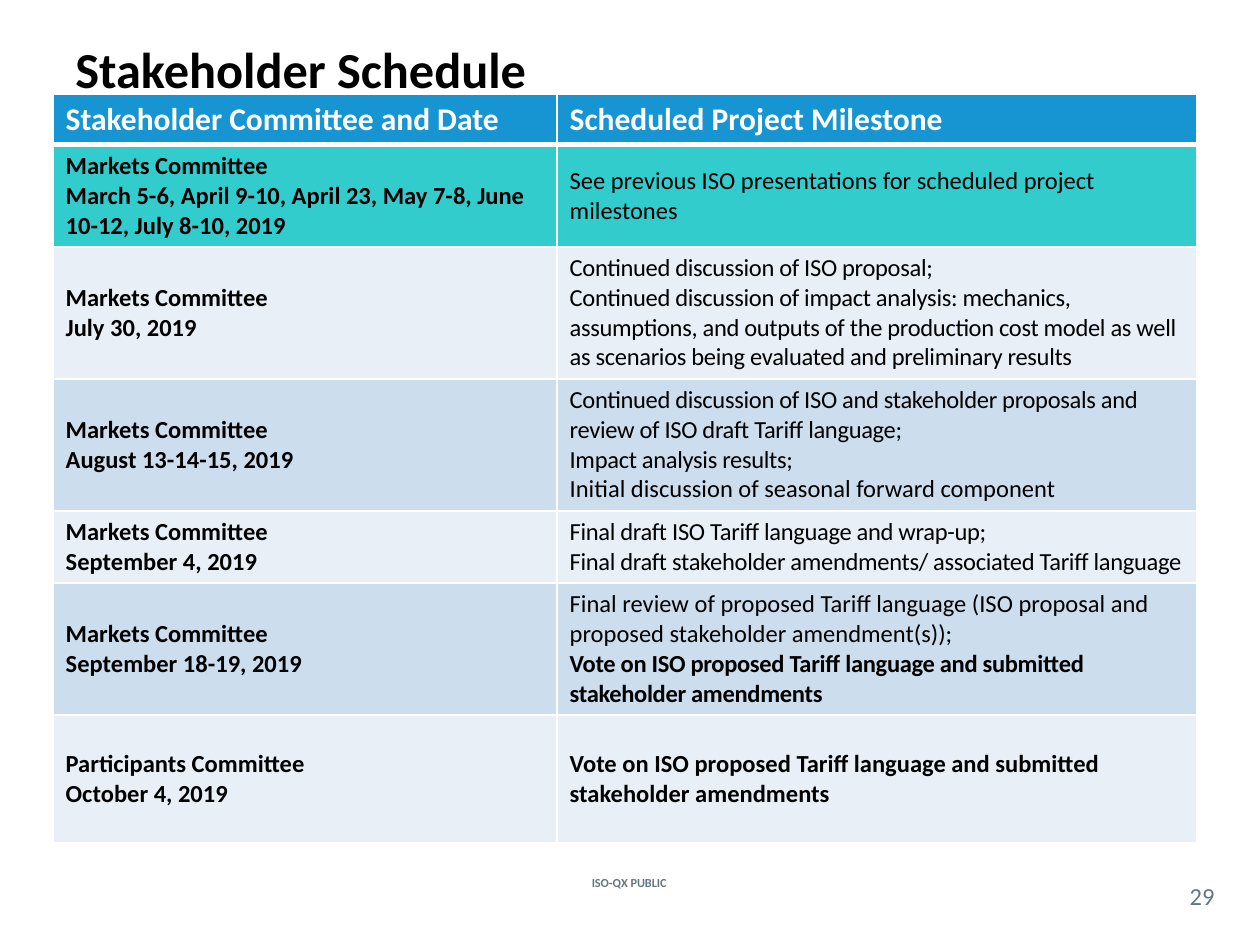
from lxml.etree import SubElement as Sub
from pptx import Presentation as Deck
from pptx.dml.color import RGBColor as Rgb
from pptx.enum.text import MSO_ANCHOR as Anchor, PP_ALIGN as Align
from pptx.oxml.ns import qn
from pptx.util import Cm, Pt

BLUE, TEAL, PALE, MIST = "1795D2", "33CCCC", "E8EFF7", "CCDDEE"
WHITE, BLACK, GREY = "FFFFFF", "000000", "62777F"
BOLD, TIGHT = "bold", "tight"
VOTE = "Vote on ISO proposed Tariff language and submitted stakeholder amendments"

HEADS = ["Stakeholder Committee and Date", "Scheduled Project Milestone"]
ROWS = [
    (2.06, TEAL, "Markets Committee",
     "March 5-6, April 9-10, April 23, May 7-8, June 10-12, July 8-10, 2019",
     [("See previous ISO presentations for scheduled project milestones",)]),
    (2.66, PALE, "Markets Committee", "July 30, 2019",
     [("Continued discussion of ISO proposal;", TIGHT),
      ("Continued discussion of impact analysis: mechanics, assumptions, and outputs of "
       "the production cost model as well as scenarios being evaluated and preliminary "
       "results", TIGHT)]),
    (2.66, MIST, "Markets Committee", "August 13-14-15, 2019",
     [("Continued discussion of ISO and stakeholder proposals and review of ISO draft "
       "Tariff language;", TIGHT),
      ("Impact analysis results;", TIGHT),
      ("Initial discussion of seasonal forward component",)]),
    (1.46, PALE, "Markets Committee", "September 4, 2019",
     [("Final draft ISO Tariff language and wrap-up;", TIGHT),
      ("Final draft stakeholder amendments/ associated Tariff language", TIGHT)]),
    (2.66, MIST, "Markets Committee", "September 18-19, 2019",
     [("Final review of proposed Tariff language (ISO proposal and proposed stakeholder "
       "amendment(s));",),
      (VOTE, BOLD, TIGHT)]),
    (2.57, PALE, "Participants Committee", "October 4, 2019", [(VOTE, BOLD)]),
]


def tint(code):
    return Rgb.from_string(code)


class Page:
    """Draws styled elements on the current slide."""

    def __init__(self, slide, font="Calibri"):
        self.slide = slide
        self.font = font

    def text(self, frame, lines, size, color, align=Align.LEFT):
        for i, (words, *marks) in enumerate(lines):
            para = frame.add_paragraph() if i else frame.paragraphs[0]
            para.alignment = align
            run = para.add_run()
            run.text = words
            run.font.name = self.font
            run.font.size = Pt(size)
            run.font.bold = BOLD in marks
            run.font.color.rgb = tint(color)
            if TIGHT in marks:
                run.font._element.set("spc", "-20")

    def label(self, box, line, size, color, align=Align.LEFT, inset=0.25):
        frame = self.slide.shapes.add_textbox(*map(Cm, box)).text_frame
        frame.word_wrap = True
        frame.vertical_anchor = Anchor.MIDDLE
        frame.margin_left = frame.margin_right = Cm(inset)
        frame.margin_top = frame.margin_bottom = Cm(inset / 2)
        self.text(frame, [line], size, color, align)

    def edge(self, cell, base):
        props = cell._tc.get_or_add_tcPr()
        for i, side in enumerate("LRTB"):
            width = base if side == "B" else 1
            line = Sub(props, qn(f"a:ln{side}"), w=str(Pt(width)))
            fill = Sub(line, qn("a:solidFill"))
            Sub(fill, qn("a:srgbClr"), val=WHITE)
            props.insert(i, line)

    def cell(self, cell, lines, fill, size=14, color=BLACK, base=1):
        cell.fill.solid()
        cell.fill.fore_color.rgb = tint(fill)
        cell.vertical_anchor = Anchor.MIDDLE
        self.text(cell.text_frame, lines, size, color)
        self.edge(cell, base)

    def table(self, left, top, widths, head, heads, rows):
        highs = [head] + [row[0] for row in rows]
        box = map(Cm, (left, top, sum(widths), sum(highs)))
        grid = self.slide.shapes.add_table(len(highs), len(widths), *box).table
        for col, width in zip(grid.columns, widths):
            col.width = Cm(width)
        for row, high in zip(grid.rows, highs):
            row.height = Cm(high)
        for i, head_text in enumerate(heads):
            self.cell(grid.cell(0, i), [(head_text, BOLD)], BLUE, 18, WHITE, 3)
        for i, (_, fill, group, date, goals) in enumerate(rows, 1):
            self.cell(grid.cell(i, 0), [(group, BOLD), (date, BOLD)], fill)
            self.cell(grid.cell(i, 1), goals, fill)


def main():
    deck = Deck()
    deck.slide_width, deck.slide_height = Cm(25.4), Cm(19.05)
    page = Page(deck.slides.add_slide(deck.slide_layouts[6]))
    page.label((10.82, 17.45, 3.73, 0.69), ("ISO-QX PUBLIC", BOLD), 7, GREY, Align.CENTER)
    page.label((1.27, 0.64, 22.86, 1.47), ("Stakeholder Schedule", BOLD), 28.8, BLACK)
    page.label((23.7, 17.68, 1.07, 0.74), ("29",), 14, GREY, Align.CENTER, 0)
    page.table(1.07, 1.9, (10.16, 12.9), 1, HEADS, ROWS)
    deck.save("out.pptx")


if __name__ == "__main__":
    main()
